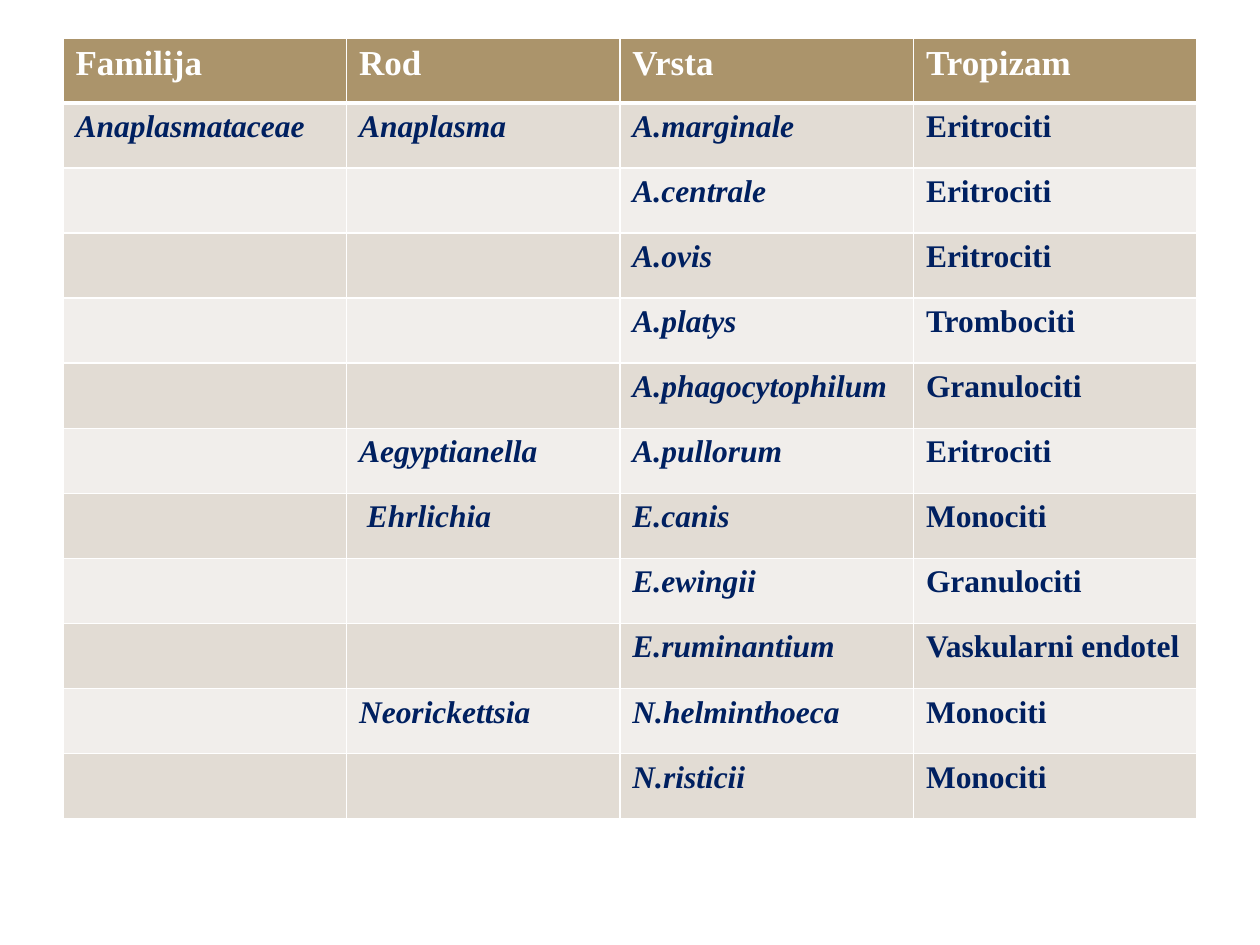
import pptx
import pptx.dml.color
import pptx.oxml
import pptx.oxml.ns
import pptx.util
from pptx.util import Inches

WHITE = pptx.dml.color.RGBColor(0xFF, 0xFF, 0xFF)
NAVY = pptx.dml.color.RGBColor(0x00, 0x20, 0x60)
HEADER_FILL = pptx.dml.color.RGBColor(0xAB, 0x94, 0x6B)
BAND_FILLS = (
    pptx.dml.color.RGBColor(0xE2, 0xDC, 0xD4),
    pptx.dml.color.RGBColor(0xF1, 0xEE, 0xEB),
)
FONT = "Times New Roman"

COLUMN_WIDTHS = (2.25, 2.17, 2.33, 2.25)
TABLE_HEIGHT = 6.2
HEADER = ("Familija", "Rod", "Vrsta", "Tropizam")
SPECIES = (
    ("Anaplasmataceae", "Anaplasma", "A.marginale", "Eritrociti"),
    ("", "", "A.centrale", "Eritrociti"),
    ("", "", "A.ovis", "Eritrociti"),
    ("", "", "A.platys", "Trombociti"),
    ("", "", "A.phagocytophilum", "Granulociti"),
    ("", "Aegyptianella", "A.pullorum", "Eritrociti"),
    ("", " Ehrlichia", "E.canis", "Monociti"),
    ("", "", "E.ewingii", "Granulociti"),
    ("", "", "E.ruminantium", "Vaskularni endotel"),
    ("", "Neorickettsia", "N.helminthoeca", "Monociti"),
    ("", "", "N.risticii", "Monociti"),
)


def write_text(cell, text, size=18, color=NAVY, italic=False):
    paragraph = cell.text_frame.paragraphs[0]
    if text:
        font = paragraph.add_run().font
        paragraph.runs[0].text = text
    else:
        font = paragraph.font
    font.name = FONT
    font.size = pptx.util.Pt(size)
    font.bold = True
    font.italic = italic
    font.color.rgb = color


def set_borders(cell, bottom=1):
    """Draw white lines on all four sides; must run before the fill is set."""
    properties = cell._tc.get_or_add_tcPr()
    for side, width in (("L", 1), ("R", 1), ("T", 1), ("B", bottom)):
        properties.append(pptx.oxml.parse_xml(
            f'<a:ln{side} {pptx.oxml.ns.nsdecls("a")} w="{pptx.util.Pt(width)}">'
            f'<a:solidFill><a:srgbClr val="{WHITE}"/></a:solidFill></a:ln{side}>'
        ))


def set_fill(cell, color):
    cell.fill.solid()
    cell.fill.fore_color.rgb = color


def add_species_table(slide):
    row_count = len(SPECIES) + 1
    table = slide.shapes.add_table(
        row_count, len(HEADER), Inches(0.5), Inches(0.3),
        Inches(sum(COLUMN_WIDTHS)), Inches(TABLE_HEIGHT),
    ).table
    for column, width in zip(table.columns, COLUMN_WIDTHS):
        column.width = Inches(width)
    for row in table.rows:
        row.height = Inches(TABLE_HEIGHT / row_count)

    for cell, text in zip(table.rows[0].cells, HEADER):
        write_text(cell, text, size=20, color=WHITE)
        set_borders(cell, bottom=3)
        set_fill(cell, HEADER_FILL)

    last_column = len(HEADER) - 1
    for row_index, texts in enumerate(SPECIES):
        for column_index, text in enumerate(texts):
            cell = table.cell(row_index + 1, column_index)
            write_text(cell, text, italic=column_index < last_column)
            set_borders(cell)
            set_fill(cell, BAND_FILLS[row_index % 2])


def main():
    presentation = pptx.Presentation()
    presentation.slide_width = Inches(10)
    presentation.slide_height = Inches(7.5)
    slide = presentation.slides.add_slide(presentation.slide_layouts[6])
    add_species_table(slide)
    presentation.save("out.pptx")


if __name__ == "__main__":
    main()
